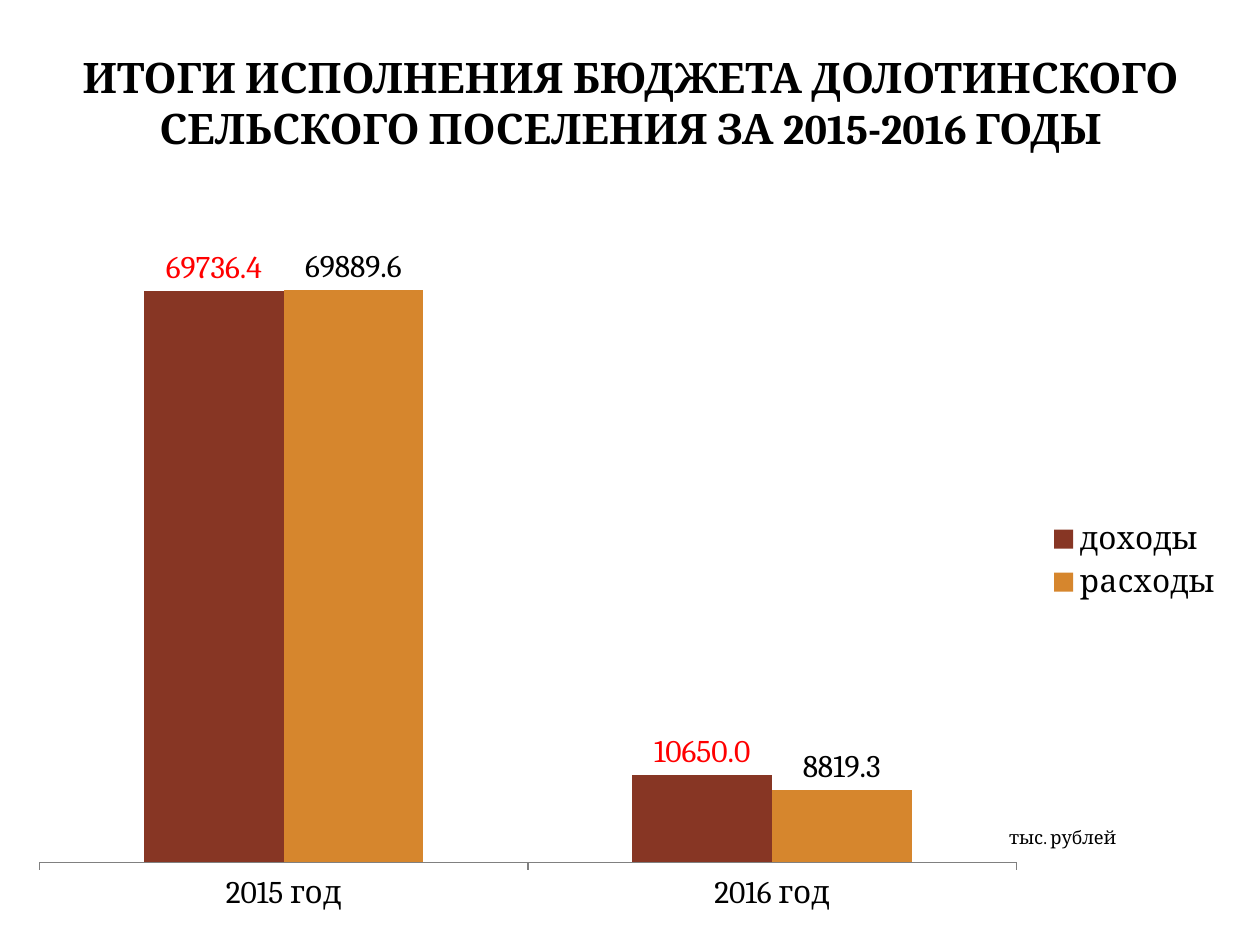
from lxml.etree import SubElement
from pptx import Presentation
from pptx.chart.data import CategoryChartData
from pptx.dml.color import RGBColor
from pptx.enum.chart import XL_CHART_TYPE as ChartType
from pptx.enum.chart import XL_LABEL_POSITION as LabelPos
from pptx.enum.chart import XL_LEGEND_POSITION as LegendPos
from pptx.enum.chart import XL_TICK_MARK as Tick
from pptx.enum.text import MSO_ANCHOR, PP_ALIGN
from pptx.oxml.ns import qn
from pptx.util import Inches, Pt

FONT = "Cambria"
BLACK = RGBColor(0x00, 0x00, 0x00)
RED = RGBColor(0xFF, 0x00, 0x00)
GRAY = RGBColor(0x80, 0x80, 0x80)
BROWN = RGBColor(0x87, 0x36, 0x24)
ORANGE = RGBColor(0xD6, 0x86, 0x2D)

WIDTH, HEIGHT = Inches(10), Inches(7.5)
TITLE_BOX = [Inches(v) for v in (0.44, 0.36, 9.13, 1.31)]
CHART_BOX = [Inches(v) for v in (0.12, 1.53, 9.69, 5.84)]
UNIT_BOX = [Inches(v) for v in (7.91, 6.51, 1.89, 0.28)]
PLOT_SHARES = {"x": 0.02, "y": 0.02, "w": 0.8, "h": 0.89}

YEARS = ["2015 год", "2016 год"]
SERIES = [
    ("доходы", (69736.4, 10650), BROWN, RED),
    ("расходы", (69889.6, 8819.3), ORANGE, BLACK),
]


def set_font(font, size, color=BLACK, bold=False):
    """Give a font the slide's typeface with a size, colour and weight."""
    font.name, font.size, font.bold = FONT, Pt(size), bold
    font.color.rgb = color


def add_title(slide, box, text):
    """Move the title placeholder into its box and format it."""
    sp = slide.shapes.title
    sp.left, sp.top, sp.width, sp.height = box
    tf = sp.text_frame
    tf.text = text
    tf.word_wrap = True
    tf.vertical_anchor = MSO_ANCHOR.TOP
    p = tf.paragraphs[0]
    p.alignment = PP_ALIGN.CENTER
    set_font(p.runs[0].font, 24, bold=True)


def add_unit(slide, box, text):
    """Write the unit of measure beside the category axis."""
    tf = slide.shapes.add_textbox(*box).text_frame
    tf.word_wrap = True
    tf.text = text
    set_font(tf.paragraphs[0].runs[0].font, 10.5)


def set_plot_layout(chart, shares):
    """Fix the inner plot area as shares of the chart's box."""
    area = chart.plots[0]._element.getparent()
    layout = area.find(qn("c:layout"))
    if layout is None:
        layout = SubElement(area, qn("c:layout"))
        area.insert(0, layout)
    manual = SubElement(layout, qn("c:manualLayout"))
    settings = {"layoutTarget": "inner", "xMode": "edge", "yMode": "edge", **shares}
    for name, value in settings.items():
        SubElement(manual, qn(f"c:{name}")).set("val", str(value))


def add_budget_chart(slide, box):
    """Draw income and spending as clustered columns by year."""
    data = CategoryChartData(number_format="0.0")
    data.categories = YEARS
    for name, values, *_ in SERIES:
        data.add_series(name, values)
    chart = slide.shapes.add_chart(ChartType.COLUMN_CLUSTERED, *box, data).chart
    set_font(chart.font, 18)
    chart.has_title = False
    chart.has_legend = True
    chart.legend.position = LegendPos.RIGHT
    chart.legend.include_in_layout = False

    axis = chart.category_axis
    axis.major_tick_mark = Tick.OUTSIDE
    axis.format.line.color.rgb = GRAY
    axis = chart.value_axis
    axis.visible = False
    axis.has_major_gridlines = False
    axis.minimum_scale, axis.maximum_scale = 0, 80000

    plot = chart.plots[0]
    plot.gap_width, plot.overlap = 150, 0
    plot.vary_by_categories = False
    for series, (_, _, fill, label_color) in zip(plot.series, SERIES):
        series.format.fill.solid()
        series.format.fill.fore_color.rgb = fill
        labels = series.data_labels
        labels.show_value = True
        labels.position = LabelPos.OUTSIDE_END
        labels.number_format = "0.0"
        labels.number_format_is_linked = False
        set_font(labels.font, 18, label_color)
    set_plot_layout(chart, PLOT_SHARES)


def main():
    """Build the budget slide and save it."""
    prs = Presentation()
    prs.slide_width, prs.slide_height = WIDTH, HEIGHT
    slide = prs.slides.add_slide(prs.slide_layouts[5])
    add_title(
        slide,
        TITLE_BOX,
        "ИТОГИ ИСПОЛНЕНИЯ БЮДЖЕТА ДОЛОТИНСКОГО СЕЛЬСКОГО ПОСЕЛЕНИЯ ЗА 2015-2016 ГОДЫ",
    )
    add_budget_chart(slide, CHART_BOX)
    add_unit(slide, UNIT_BOX, "тыс. рублей")
    prs.save("out.pptx")


if __name__ == "__main__":
    main()
